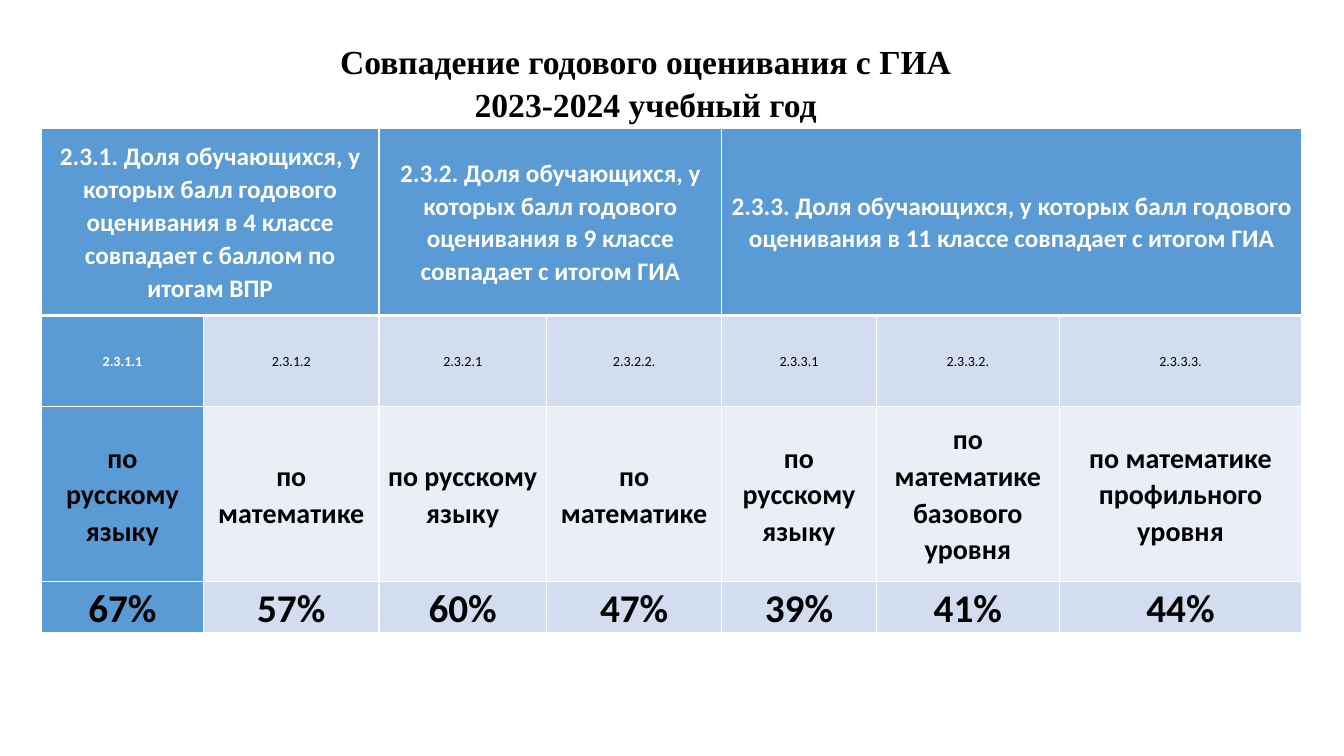
import pptx
import pptx.dml.color
import pptx.enum.text
import pptx.oxml.ns
import pptx.util
from lxml import etree

Cm = pptx.util.Cm
Pt = pptx.util.Pt
RGBColor = pptx.dml.color.RGBColor
qn = pptx.oxml.ns.qn

BLACK = RGBColor(0x00, 0x00, 0x00)
WHITE = RGBColor(0xFF, 0xFF, 0xFF)
BLUE = RGBColor(0x5B, 0x9B, 0xD5)
PALE_BLUE = RGBColor(0xD2, 0xDE, 0xEF)
LIGHT_BLUE = RGBColor(0xEA, 0xEF, 0xF7)

COLUMN_WIDTHS = (4.09, 4.42, 4.22, 4.42, 3.89, 4.62, 6.1)
ROW_HEIGHTS = (4.72, 2.29, 4.42, 1.24)

# Each group: heading and its indicators (number, subject, share)
GROUPS = (
    ("2.3.1. Доля обучающихся, у которых балл годового оценивания в 4 классе "
     "совпадает с баллом по итогам ВПР",
     (("2.3.1.1", "по русскому языку", "67%"),
      ("2.3.1.2", "по математике", "57%"))),
    ("2.3.2. Доля обучающихся, у которых балл годового оценивания в 9 классе "
     "совпадает с итогом ГИА",
     (("2.3.2.1", "по русскому языку", "60%"),
      ("2.3.2.2.", "по математике", "47%"))),
    ("2.3.3. Доля обучающихся, у которых балл годового оценивания в 11 классе "
     "совпадает с итогом ГИА",
     (("2.3.3.1", "по русскому языку", "39%"),
      ("2.3.3.2.", "по математике базового уровня", "41%"),
      ("2.3.3.3.", "по математике профильного уровня", "44%"))),
)

# Size, bold and fill of the number, subject and share rows
INDICATOR_STYLES = ((10, False, PALE_BLUE), (20, True, LIGHT_BLUE), (28, True, PALE_BLUE))


class SlideBuilder:
    line_spacing = 1.07
    title_font = "Times New Roman"
    table_font = "Calibri"

    def __init__(self, slide):
        self.slide = slide

    def format_text(self, frame, font_name, size, color, bold):
        for paragraph in frame.paragraphs:
            paragraph.alignment = pptx.enum.text.PP_ALIGN.CENTER
            paragraph.line_spacing = self.line_spacing
            for run in paragraph.runs:
                run.font.name = font_name
                run.font.size = Pt(size)
                run.font.color.rgb = color
                run.font.bold = bold

    def add_title(self, text, left, top, width, height):
        title = self.slide.shapes.add_textbox(Cm(left), Cm(top), Cm(width), Cm(height))
        title.text_frame.word_wrap = True
        title.text_frame.text = text
        self.format_text(title.text_frame, self.title_font, 24, BLACK, True)

    def add_table(self, left, top, column_widths, row_heights):
        table = self.slide.shapes.add_table(
            len(row_heights), len(column_widths), Cm(left), Cm(top),
            Cm(sum(column_widths)), Cm(sum(row_heights))).table
        for column, width in zip(table.columns, column_widths):
            column.width = Cm(width)
        for row, height in zip(table.rows, row_heights):
            row.height = Cm(height)
        return table

    def add_borders(self, cell, top=1, bottom=1):
        properties = cell._tc.get_or_add_tcPr()
        for side, width in (("L", 1), ("R", 1), ("T", top), ("B", bottom)):
            line = etree.SubElement(properties, qn(f"a:ln{side}"), w=str(Pt(width)))
            fill = etree.SubElement(line, qn("a:solidFill"))
            etree.SubElement(fill, qn("a:srgbClr"), val=str(WHITE))

    def fill_cell(self, cell, text, size, color, bold, fill):
        cell.fill.solid()
        cell.fill.fore_color.rgb = fill
        cell.margin_left = cell.margin_right = Cm(0.18)
        cell.margin_top = cell.margin_bottom = 0
        cell.vertical_anchor = pptx.enum.text.MSO_ANCHOR.MIDDLE
        cell.text_frame.text = text
        self.format_text(cell.text_frame, self.table_font, size, color, bold)

    def add_results(self, left, top):
        table = self.add_table(left, top, COLUMN_WIDTHS, ROW_HEIGHTS)
        for row in range(len(ROW_HEIGHTS)):
            for column in range(len(COLUMN_WIDTHS)):
                self.add_borders(table.cell(row, column),
                                 top=3 if row == 1 else 1, bottom=3 if row == 0 else 1)
        column = 0
        for heading, indicators in GROUPS:
            heading_cell = table.cell(0, column)
            heading_cell.merge(table.cell(0, column + len(indicators) - 1))
            self.fill_cell(heading_cell, heading, 18, WHITE, True, BLUE)
            for indicator in indicators:
                for row, (text, style) in enumerate(zip(indicator, INDICATOR_STYLES), 1):
                    size, bold, fill = style
                    color = BLACK
                    if column == 0:
                        bold, fill = True, BLUE
                        color = WHITE if row == 1 else BLACK
                    self.fill_cell(table.cell(row, column), text, size, color, bold, fill)
                column += 1


def main():
    presentation = pptx.Presentation()
    presentation.slide_width = Cm(33.87)
    presentation.slide_height = Cm(19.05)
    builder = SlideBuilder(presentation.slides.add_slide(presentation.slide_layouts[6]))
    builder.add_title("Совпадение годового оценивания с ГИА\n2023-2024 учебный год",
                      7.8, 0.84, 16.94, 2.39)
    builder.add_results(1.04, 3.23)
    presentation.save("out.pptx")


if __name__ == "__main__":
    main()
